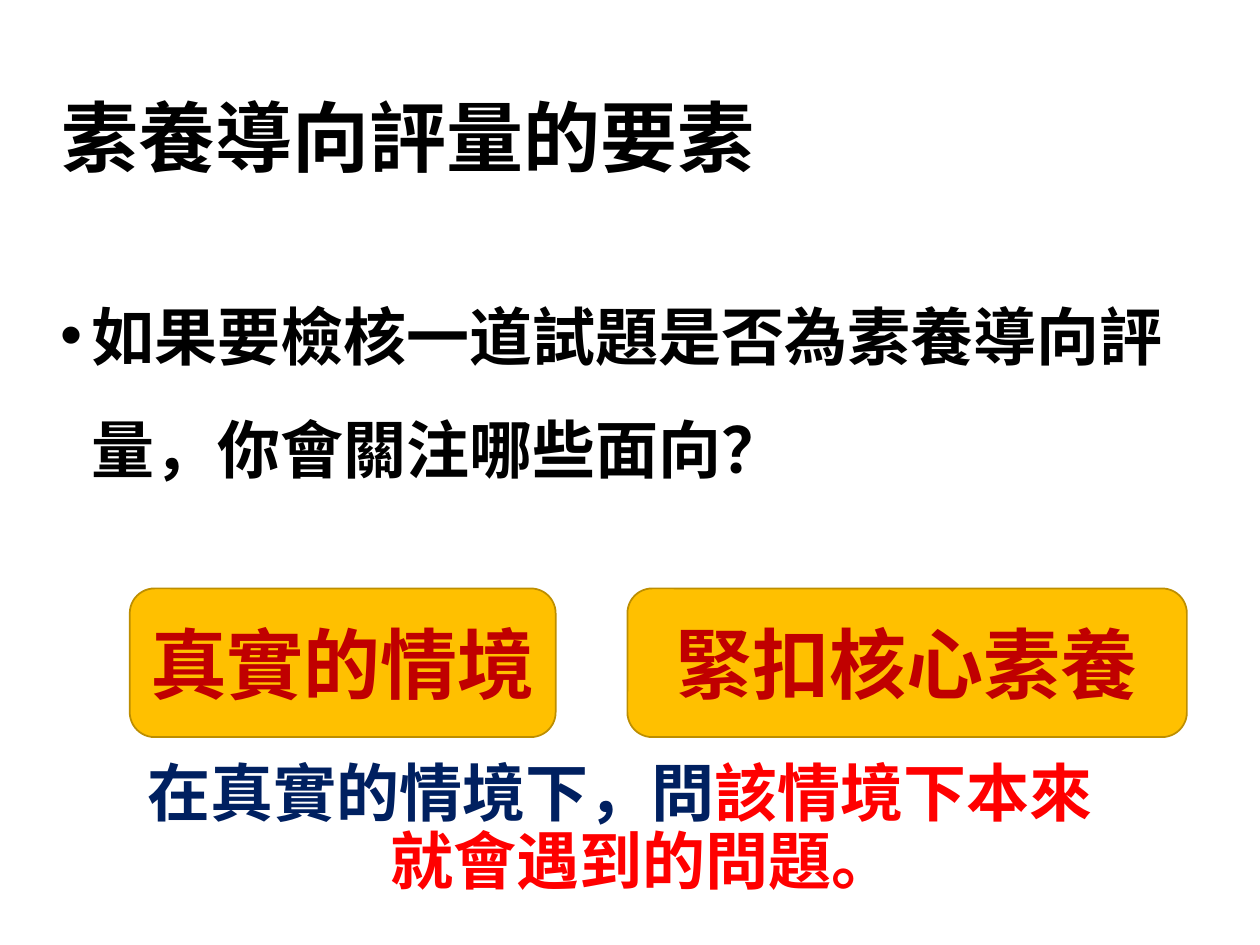
"""Build the slide on the elements of competency-based assessment."""
from lxml import etree
from pptx import Presentation
from pptx.dml.color import RGBColor
from pptx.enum import shapes, text
from pptx.oxml.ns import qn
from pptx.util import Inches, Pt

FONT = "Noto Sans CJK SC"
BLACK = RGBColor(0x00, 0x00, 0x00)
AMBER = RGBColor(0xFF, 0xC0, 0x00)
OCHRE = RGBColor(0xBD, 0x8E, 0x00)
CRIMSON = RGBColor(0xC0, 0x00, 0x00)
NAVY = RGBColor(0x00, 0x20, 0x60)
RED = RGBColor(0xFF, 0x00, 0x00)


def add_bullet(para):
    properties = para._p.get_or_add_pPr()
    properties.set("marL", str(Inches(0.25)))
    properties.set("indent", str(Inches(-0.25)))
    etree.SubElement(properties, qn("a:buFont"), typeface="Arial")
    etree.SubElement(properties, qn("a:buChar"), char="•")


def style_paragraph(para, size, color, spacing=None, align=text.PP_ALIGN.LEFT):
    para.alignment = align
    para.line_spacing = spacing
    font = para.font
    font.size, font.bold, font.name = Pt(size), True, FONT
    if color is not None:
        font.color.rgb = color
    defaults = para._p.pPr.find(qn("a:defRPr"))
    etree.SubElement(defaults, qn("a:ea"), typeface=FONT)


def add_text_box(page, left, top, width, height, anchor=text.MSO_ANCHOR.MIDDLE):
    box = page.shapes.add_textbox(Inches(left), Inches(top), Inches(width), Inches(height))
    frame = box.text_frame
    frame.word_wrap = True
    frame.vertical_anchor = anchor
    return frame


def add_label(page, left, width, wording):
    box = page.shapes.add_shape(shapes.MSO_SHAPE.ROUNDED_RECTANGLE,
                                Inches(left), Inches(4.67), Inches(width), Inches(1.18))
    box.shadow.inherit = False
    box.fill.solid()
    box.fill.fore_color.rgb = AMBER
    box.line.color.rgb = OCHRE
    box.line.width = Pt(1)
    frame = box.text_frame
    frame.word_wrap = True
    frame.vertical_anchor = text.MSO_ANCHOR.MIDDLE
    para = frame.paragraphs[0]
    para.text = wording
    style_paragraph(para, 44, CRIMSON, align=text.PP_ALIGN.CENTER)


def add_title(page):
    para = add_text_box(page, 0.39, 0.4, 8.62, 1.45).paragraphs[0]
    para.text = "素養導向評量的要素"
    style_paragraph(para, 44, BLACK, 0.9)


def add_question(page):
    frame = add_text_box(page, 0.38, 2.01, 9.43, 5.02, text.MSO_ANCHOR.TOP)
    para = frame.paragraphs[0]
    para.text = "如果要檢核一道試題是否為素養導向評量，你會關注哪些面向？"
    add_bullet(para)
    style_paragraph(para, 36, BLACK, 1.5)


def add_conclusion(page):
    frame = add_text_box(page, 1.07, 5.86, 8.05, 1.45)
    opening = frame.paragraphs[0]
    for wording, color in (("在真實的情境下，問", NAVY), ("該情境下本來", RED)):
        span = opening.add_run()
        span.text = wording
        span.font.color.rgb = color
    style_paragraph(opening, 36, None, 0.9)
    ending = frame.add_paragraph()
    ending.text = "就會遇到的問題。"
    style_paragraph(ending, 36, RED, 0.9, text.PP_ALIGN.CENTER)


def main():
    deck = Presentation()
    deck.slide_width, deck.slide_height = Inches(10), Inches(7.5)
    page = deck.slides.add_slide(deck.slide_layouts[6])
    add_title(page)
    add_question(page)
    add_label(page, 1.03, 3.38, "真實的情境")
    add_label(page, 4.98, 4.44, "緊扣核心素養")
    add_conclusion(page)
    deck.save("out.pptx")


if __name__ == "__main__":
    main()
